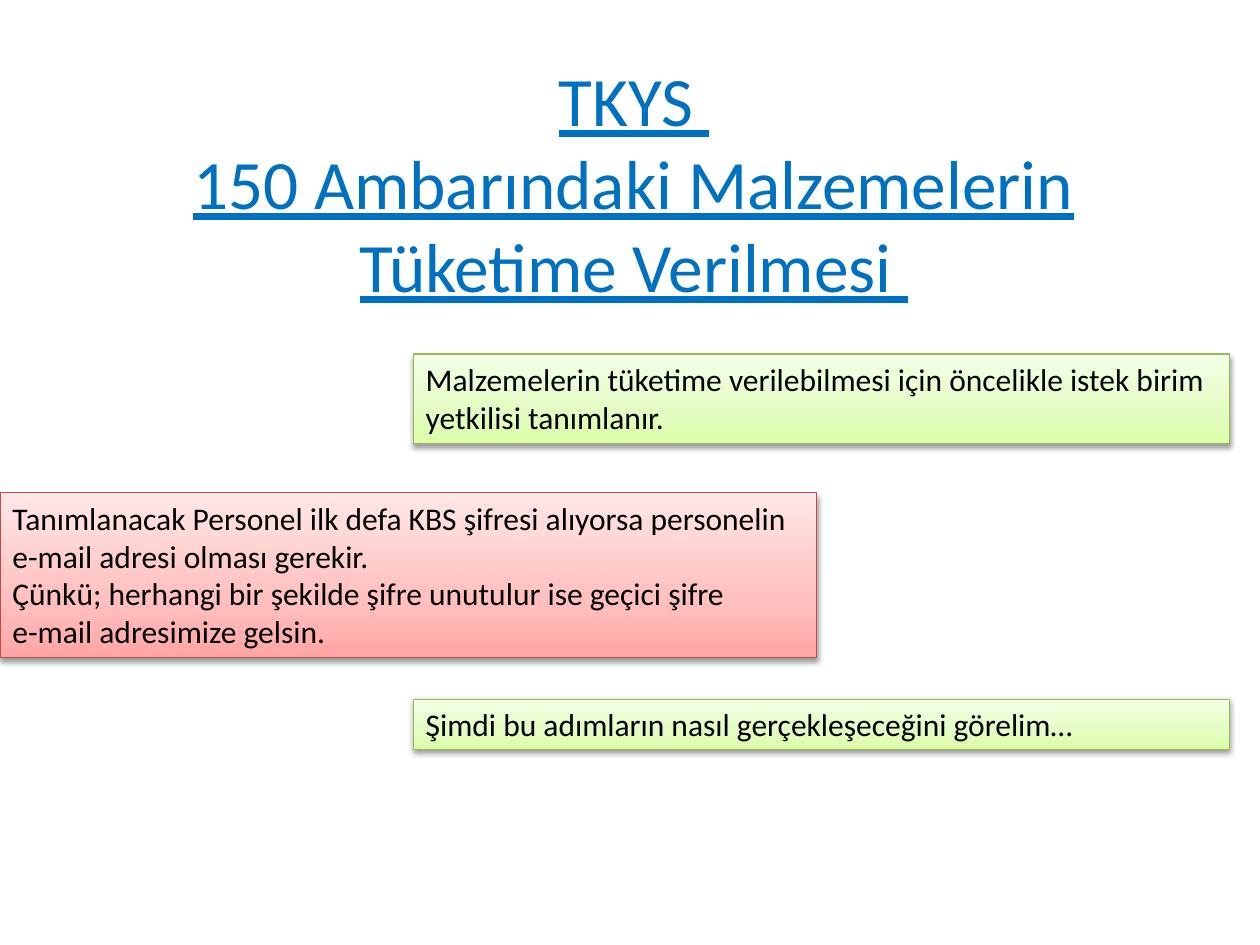
from lxml import etree
from pptx import Presentation
from pptx.dml.color import RGBColor
from pptx.enum.shapes import MSO_SHAPE
from pptx.enum.text import MSO_ANCHOR, MSO_AUTO_SIZE, PP_ALIGN
from pptx.oxml.ns import qn
from pptx.util import Inches, Pt

RECT = MSO_SHAPE.RECTANGLE
LEFT, CENTER = PP_ALIGN.LEFT, PP_ALIGN.CENTER
TOP, MIDDLE = MSO_ANCHOR.TOP, MSO_ANCHOR.MIDDLE
GROW = MSO_AUTO_SIZE.SHAPE_TO_FIT_TEXT

GREEN = ("98B955", ("DAFDA7", "E4FCC2", "F5FFE7"))
RED = ("BF4C48", ("FFA6A5", "FFC0BF", "FFE7E7"))
STOPS = (0, 35, 100)
NOTE_W = 6.48
NOTE_RIGHT = 3.28


def rgb(value):
    return RGBColor.from_string(value)


class Deck:
    font = "Calibri"

    def __init__(self, width, height):
        self.prs = Presentation()
        self.prs.slide_width = Inches(width)
        self.prs.slide_height = Inches(height)
        self.s = self.prs.slides.add_slide(self.prs.slide_layouts[6])

    def add_text(self, tf, paragraphs, size, color, align, underline=None):
        tf.word_wrap = True
        for i, lines in enumerate(paragraphs):
            p = tf.add_paragraph() if i else tf.paragraphs[0]
            p.alignment = align
            for j, line in enumerate(lines):
                if j:
                    p.add_line_break()
                r = p.add_run()
                r.text = line
                r.font.name = self.font
                r.font.size = Pt(size)
                r.font.underline = underline
                r.font.color.rgb = rgb(color)

    def title(self, x, y, w, h, lines):
        sp = self.s.shapes.add_textbox(Inches(x), Inches(y), Inches(w), Inches(h))
        tf = sp.text_frame
        tf.vertical_anchor = MIDDLE
        self.add_text(tf, [lines], 39.6, "0070C0", CENTER, True)

    def note(self, x, y, h, style, paragraphs):
        line, colors = style
        sp = self.s.shapes.add_shape(RECT, Inches(x), Inches(y), Inches(NOTE_W), Inches(h))
        sp.line.color.rgb = rgb(line)
        sp.line.width = Pt(0.75)
        self.gradient(sp, colors)
        self.shadow(sp)
        tf = sp.text_frame
        tf.vertical_anchor = TOP
        tf.auto_size = GROW
        self.add_text(tf, paragraphs, 18, "000000", LEFT)

    def gradient(self, sp, colors):
        sp.fill.gradient()
        sp.fill.gradient_angle = 90
        stops = sp._element.spPr.find(qn("a:gradFill")).find(qn("a:gsLst"))
        for gs in list(stops):
            stops.remove(gs)
        for pos, color in zip(STOPS, colors):
            gs = etree.SubElement(stops, qn("a:gs"), pos=str(pos * 1000))
            etree.SubElement(gs, qn("a:srgbClr"), val=color)

    def shadow(self, sp):
        sp.shadow.inherit = False
        effects = sp._element.spPr.find(qn("a:effectLst"))
        shadow = etree.SubElement(effects, qn("a:outerShdw"), blurRad=str(Pt(3.15)),
                                  dist=str(Pt(1.57)), dir="5400000", rotWithShape="0")
        color = etree.SubElement(shadow, qn("a:srgbClr"), val="000000")
        etree.SubElement(color, qn("a:alpha"), val="38000")


def main():
    deck = Deck(10, 7.5)
    deck.title(0.78, 0.39, 8.5, 2.11,
               ["TKYS ", "150 Ambarındaki Malzemelerin Tüketime Verilmesi "])
    deck.note(NOTE_RIGHT, 2.81, 0.71, GREEN, [
        ["Malzemelerin tüketime verilebilmesi için öncelikle istek birim yetkilisi tanımlanır."]])
    deck.note(0, 3.91, 1.31, RED, [
        ["Tanımlanacak Personel ilk defa KBS şifresi alıyorsa personelin "
         "e-mail adresi olması gerekir."],
        ["Çünkü; herhangi bir şekilde şifre unutulur ise geçici şifre",
         "e-mail adresimize gelsin."]])
    deck.note(NOTE_RIGHT, 5.55, 0.4, GREEN, [
        ["Şimdi bu adımların nasıl gerçekleşeceğini görelim…"]])
    deck.prs.save("out.pptx")


if __name__ == "__main__":
    main()
